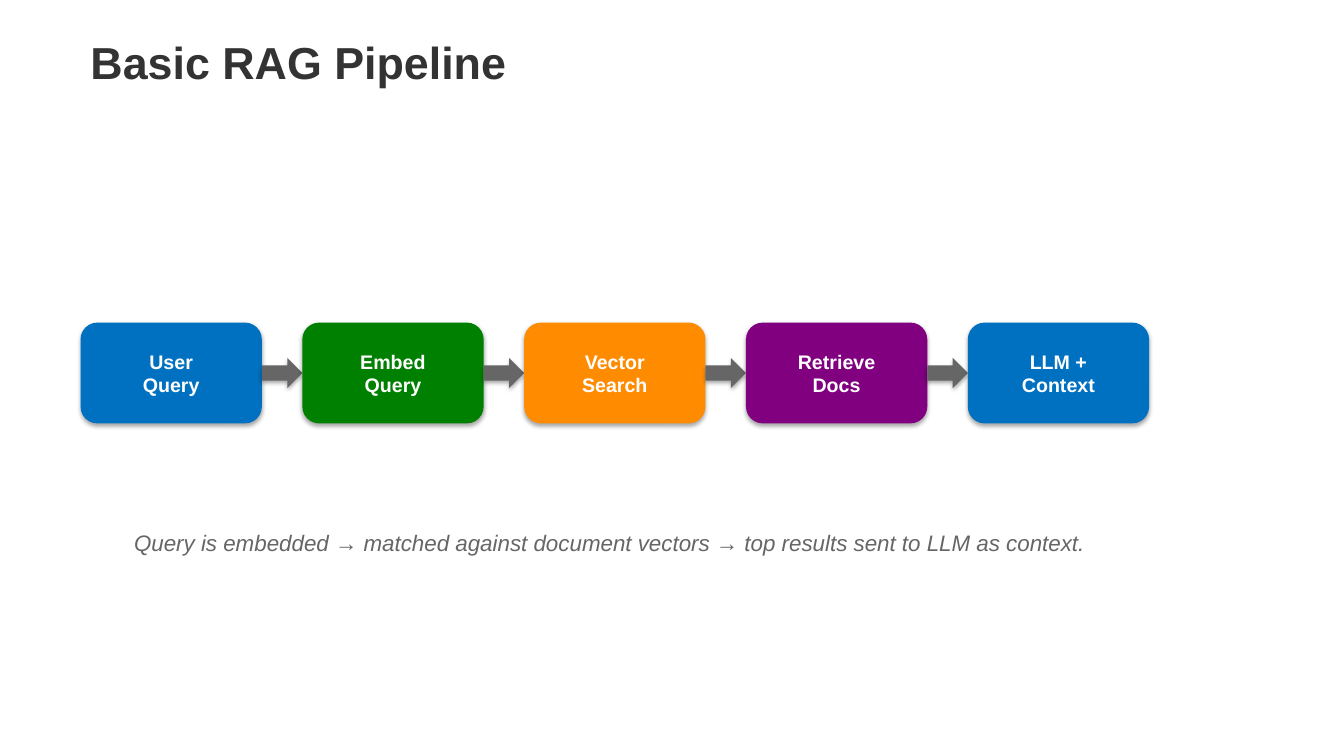
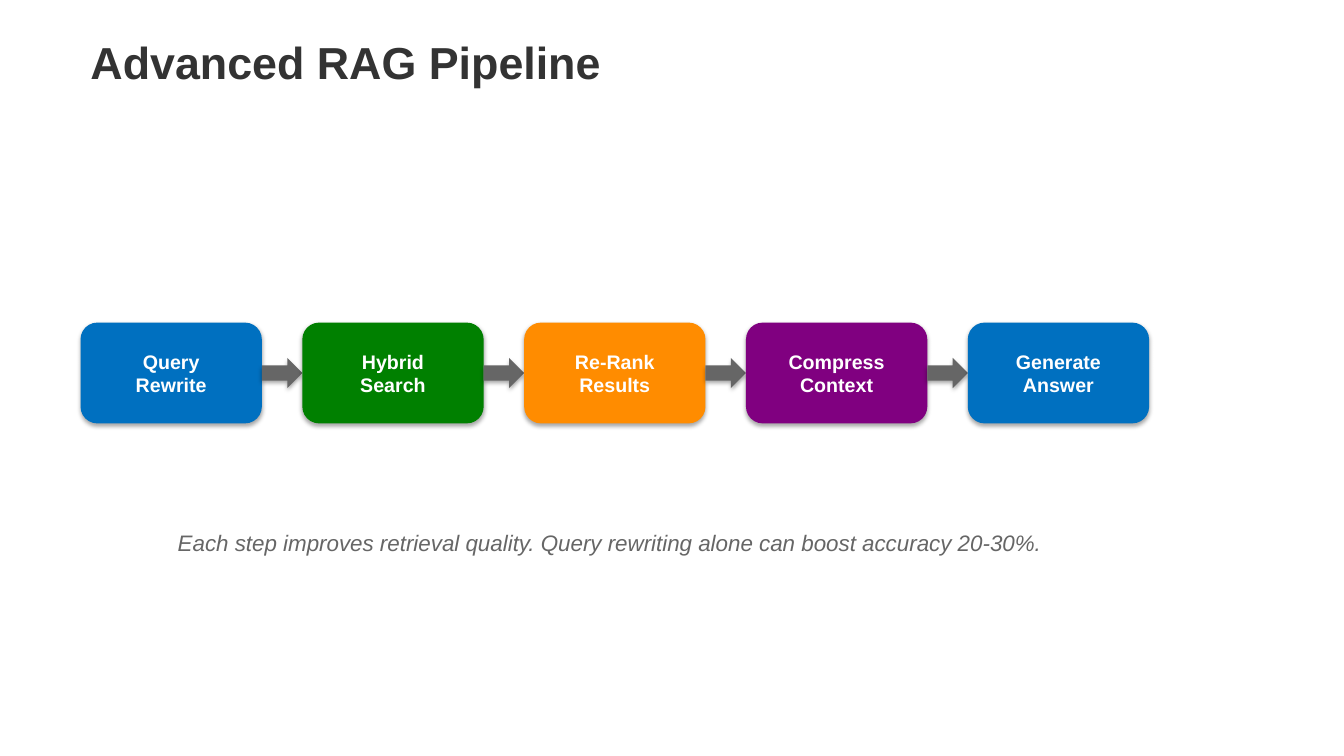
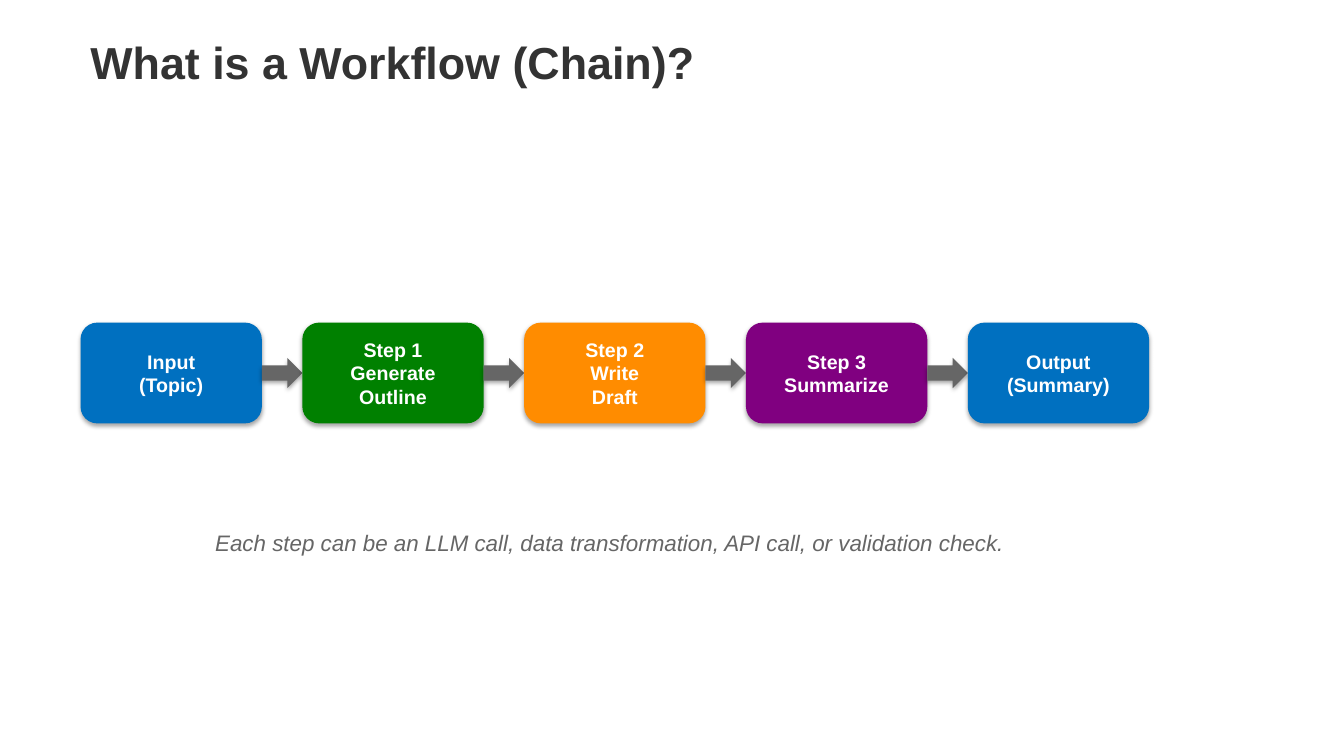
"""Build three slides that each show a five-step pipeline with a caption."""
import copy

import pptx
import pptx.dml.color
import pptx.enum.shapes
import pptx.enum.text
import pptx.oxml.ns
import pptx.util

Cm = pptx.util.Cm
Pt = pptx.util.Pt
Shape = pptx.enum.shapes.MSO_SHAPE
Align = pptx.enum.text.PP_ALIGN
Anchor = pptx.enum.text.MSO_ANCHOR
Fit = pptx.enum.text.MSO_AUTO_SIZE

SLIDES = [
    {
        "title": "Basic RAG Pipeline",
        "steps": ["User\nQuery", "Embed\nQuery", "Vector\nSearch", "Retrieve\nDocs", "LLM +\nContext"],
        "caption": "Query is embedded → matched against document vectors → top results sent to LLM as context.",
    },
    {
        "title": "Advanced RAG Pipeline",
        "steps": ["Query\nRewrite", "Hybrid\nSearch", "Re-Rank\nResults", "Compress\nContext", "Generate\nAnswer"],
        "caption": "Each step improves retrieval quality. Query rewriting alone can boost accuracy 20-30%.",
    },
    {
        "title": "What is a Workflow (Chain)?",
        "steps": [
            "Input\n(Topic)",
            "Step 1\nGenerate\nOutline",
            "Step 2\nWrite\nDraft",
            "Step 3\nSummarize",
            "Output\n(Summary)",
        ],
        "caption": "Each step can be an LLM call, data transformation, API call, or validation check.",
    },
]

THEME = {
    "steps": ["0070C0", "008000", "FF8C00", "800080", "0070C0"],
    "arrow": "666666",
    "title": {"color": "333333", "font": {"name": "Arial", "size": Pt(32), "bold": True}},
    "label": {"color": "FFFFFF", "font": {"name": "Arial", "size": Pt(14), "bold": True}},
    "caption": {"color": "666666", "font": {"name": "Arial", "size": Pt(16), "italic": True}},
}

PAGE_WIDTH, PAGE_HEIGHT = Cm(33.87), Cm(19.05)
MARGIN, TEXT_WIDTH = Cm(2.03), Cm(26.67)
TITLE_TOP, TITLE_HEIGHT = Cm(0.76), Cm(2.29)
CAPTION_TOP, CAPTION_HEIGHT = Cm(13.21), Cm(3.05)
STEP_TOP, STEP_WIDTH, STEP_HEIGHT = Cm(8.13), Cm(4.57), Cm(2.54)
ARROW_WIDTH, ARROW_HEIGHT = Cm(1.02), Cm(0.76)


def rgb(color):
    """Turn a hex string into a colour."""
    return pptx.dml.color.RGBColor.from_string(color)


def write(frame, text, style, align=None, **settings):
    """Write one styled paragraph, with line breaks, into a text frame."""
    for name, value in settings.items():
        setattr(frame, name, value)
    para = frame.paragraphs[0]
    para.text = text
    para.alignment = align
    for span in para.runs:
        for name, value in style["font"].items():
            setattr(span.font, name, value)
        span.font.color.rgb = rgb(style["color"])
    for line_break in para._p.findall(pptx.oxml.ns.qn("a:br")):
        line_break.insert(0, copy.deepcopy(para.runs[0]._r.rPr))


def add_block(page, kind, left, top, width, height, color):
    """Add a filled shape without outline, keeping the theme shadow."""
    block = page.shapes.add_shape(kind, left, top, width, height)
    block.fill.solid()
    block.fill.fore_color.rgb = rgb(color)
    block.line.fill.background()
    return block


def add_pipeline(page, steps):
    """Lay the steps out in a row with an arrow in each gap."""
    arrow_top = STEP_TOP + (STEP_HEIGHT - ARROW_HEIGHT) // 2
    for index, (label, color) in enumerate(zip(steps, THEME["steps"])):
        left = MARGIN + index * (STEP_WIDTH + ARROW_WIDTH)
        if index:
            add_block(page, Shape.RIGHT_ARROW, left - ARROW_WIDTH, arrow_top,
                      ARROW_WIDTH, ARROW_HEIGHT, THEME["arrow"])
        box = add_block(page, Shape.ROUNDED_RECTANGLE, left, STEP_TOP, STEP_WIDTH, STEP_HEIGHT, color)
        write(box.text_frame, label, THEME["label"], Align.CENTER,
              word_wrap=True, vertical_anchor=Anchor.MIDDLE)


def add_slide(deck, content):
    """Add one slide with its title, pipeline and caption."""
    page = deck.slides.add_slide(deck.slide_layouts[6])
    title = page.shapes.add_textbox(MARGIN, TITLE_TOP, TEXT_WIDTH, TITLE_HEIGHT)
    write(title.text_frame, content["title"], THEME["title"],
          word_wrap=False, auto_size=Fit.SHAPE_TO_FIT_TEXT)
    add_pipeline(page, content["steps"])
    caption = page.shapes.add_textbox(MARGIN, CAPTION_TOP, TEXT_WIDTH, CAPTION_HEIGHT)
    write(caption.text_frame, content["caption"], THEME["caption"], Align.CENTER,
          word_wrap=True, auto_size=Fit.SHAPE_TO_FIT_TEXT)


def main():
    """Build and save the deck."""
    deck = pptx.Presentation()
    deck.slide_width, deck.slide_height = PAGE_WIDTH, PAGE_HEIGHT
    for content in SLIDES:
        add_slide(deck, content)
    deck.save("out.pptx")


if __name__ == "__main__":
    main()
